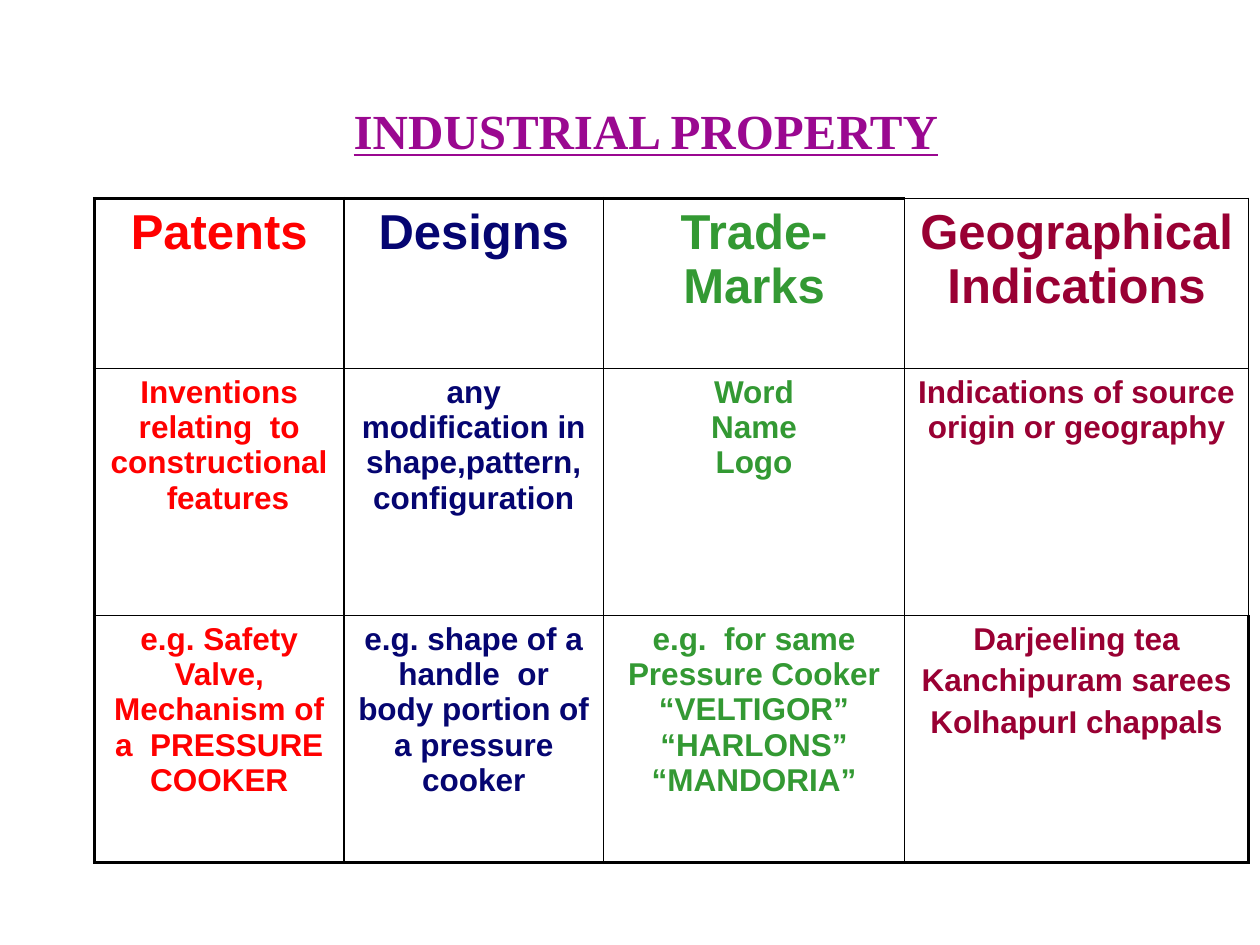
from dataclasses import dataclass

from lxml import etree
from pptx import Presentation
from pptx.dml.color import RGBColor
from pptx.enum.text import MSO_ANCHOR, PP_ALIGN
from pptx.oxml.ns import qn
from pptx.util import Inches, Pt

CENTER = PP_ALIGN.CENTER
TOP = MSO_ANCHOR.TOP
WIDE, HIGH = Inches(10), Inches(7.5)
THIN, THICK = Pt(1), Pt(2.25)
BLACK = "000000"
ROWS = (1.35, 1.96, 1.96)  # inches
SIZES = (28, 18, 18)  # points, one per row


@dataclass(frozen=True)
class Kind:
    """One column: a kind of industrial property."""
    width: float
    color: str
    head: str
    scope: tuple[str, ...]
    cases: tuple[str, ...]
    gap: float = 0  # points between paragraphs
    shift: float = 0  # inches of indent on the last scope line

    def texts(self) -> tuple[tuple[str, ...], ...]:
        return (self.head,), self.scope, self.cases


KINDS = (
    Kind(1.98, "FF0000", "Patents",
         ("Inventions relating  to constructional", "features"),
         ("e.g. Safety Valve,", "Mechanism of a  PRESSURE COOKER"), shift=0.14),
    Kind(2.06, "050571", "Designs",
         ("any modification in shape,pattern,", "configuration"),
         ("e.g. shape of a", "handle  or body portion of a pressure cooker")),
    Kind(2.39, "339933", "Trade- Marks",
         ("Word", "Name", "Logo"),
         ("e.g.  for same", "Pressure Cooker",
          "“VELTIGOR”", "“HARLONS”", "“MANDORIA”")),
    Kind(2.73, "990033", "Geographical Indications",
         ("Indications of source origin or geography",),
         ("Darjeeling tea", "Kanchipuram sarees", "KolhapurI chappals"), gap=3.6),
)


def rgb(code: str) -> RGBColor:
    return RGBColor.from_string(code)


def write(para, text: str, face: str, size: float, color: str, under: bool = False) -> None:
    """Put one bold, centred run in a paragraph."""
    para.alignment = CENTER
    run = para.add_run()
    run.text = text
    font = run.font
    font.name, font.size, font.bold = face, Pt(size), True
    font.underline = under
    font.color.rgb = rgb(color)


def border(cell, sides: dict[str, int]) -> None:
    """Draw the cell's edges, given as side letter to width."""
    props = cell._tc.get_or_add_tcPr()
    for side, width in sides.items():
        line = etree.SubElement(props, qn(f"a:ln{side}"), w=str(width))
        fill = etree.SubElement(line, qn("a:solidFill"))
        etree.SubElement(fill, qn("a:srgbClr"), val=BLACK)


def edges(row: int, col: int) -> dict[str, int]:
    """The frame is thick, but for the top right corner."""
    end, foot = col == len(KINDS) - 1, row == len(ROWS) - 1
    return {
        "L": THICK if col == 0 else THIN,
        "R": THICK if end and foot else THIN,
        "T": THICK if row == 0 and not end else THIN,
        "B": THICK if foot else THIN,
    }


def fill_cell(cell, lines: tuple[str, ...], size: float, kind: Kind) -> None:
    frame = cell.text_frame
    for i, text in enumerate(lines):
        para = frame.add_paragraph() if i else frame.paragraphs[0]
        if i and kind.gap:
            para.space_before = Pt(kind.gap)
        if i and kind.shift and lines is kind.scope:
            para._p.get_or_add_pPr().set("marL", str(Inches(kind.shift)))
        write(para, text, "Arial", size, kind.color)


def draw_table(slide) -> None:
    wide = Inches(sum(kind.width for kind in KINDS))
    table = slide.shapes.add_table(
        len(ROWS), len(KINDS), int(WIDE * 0.075), int(HIGH * 0.21),
        wide, Inches(sum(ROWS))).table
    table.first_row = table.horz_banding = False
    for row, high in enumerate(ROWS):
        table.rows[row].height = Inches(high)
    for col, kind in enumerate(KINDS):
        table.columns[col].width = Inches(kind.width)
        for row, lines in enumerate(kind.texts()):
            cell = table.cell(row, col)
            cell.vertical_anchor = TOP
            border(cell, edges(row, col))
            cell.fill.background()
            fill_cell(cell, lines, SIZES[row], kind)


def draw_title(slide) -> None:
    box = slide.shapes.add_textbox(
        int(WIDE * 0.2), int(HIGH * 0.1), int(WIDE * 0.625), Inches(1.17))
    frame = box.text_frame
    frame.word_wrap = True
    write(frame.paragraphs[0], "INDUSTRIAL PROPERTY",
          "Times New Roman", 28, "9A0890", under=True)


def main() -> None:
    deck = Presentation()
    deck.slide_width, deck.slide_height = WIDE, HIGH
    slide = deck.slides.add_slide(deck.slide_layouts[6])
    draw_table(slide)
    draw_title(slide)
    deck.save("out.pptx")


if __name__ == "__main__":
    main()
